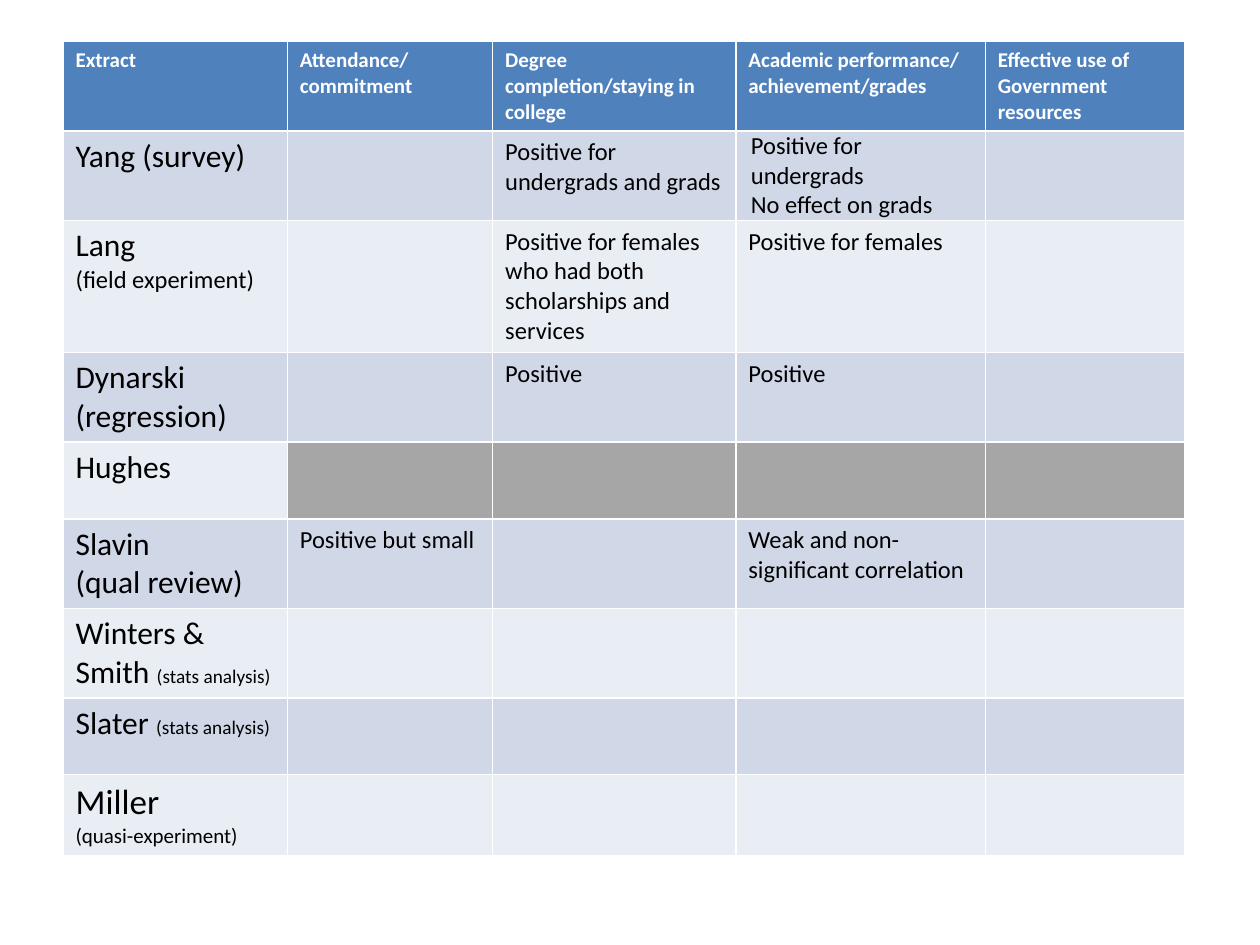
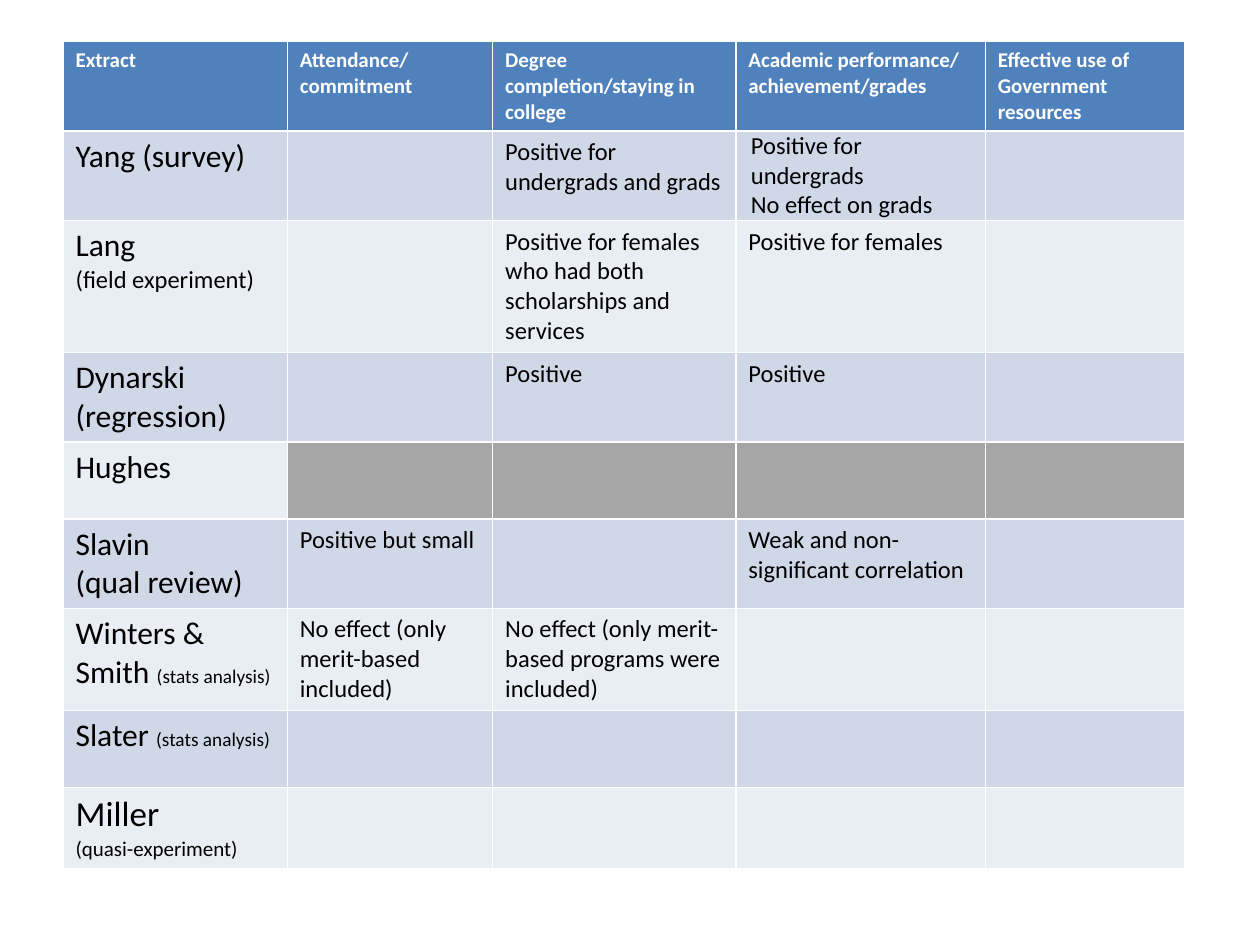
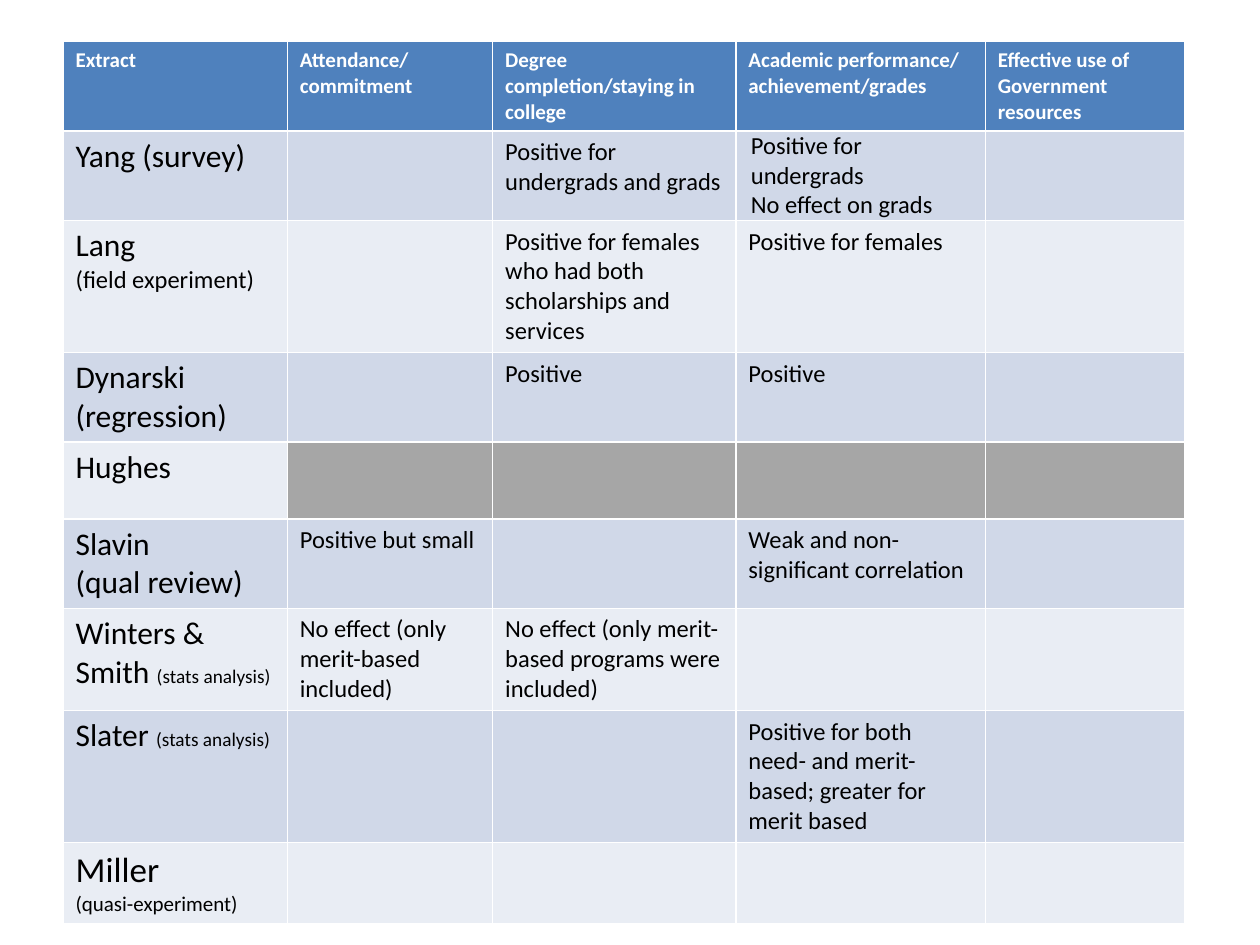
from pptx import Presentation, util as u
from pptx.dml.color import RGBColor

FONT = "Calibri"
HEADER_FILL, BANDS, EXCLUDED_FILL = "4F81BD", ("E9EDF4", "D0D8E8"), "A6A6A6"
WHITE, BLACK = "FFFFFF", "000000"
COLUMN_WIDTHS = (1.78, 1.63, 1.93, 1.98, 1.58)
ROW_HEIGHT = 0.61
FINDING_SIZE = 14

HEADERS = ("Extract", "Attendance/\ncommitment", "Degree completion/staying in college",
           "Academic performance/\nachievement/grades",
           "Effective use of Government resources")

# Each study is a list of paragraphs, each paragraph a list of (words, size)
STUDIES = (
    [[("Yang (survey)", 18)]],
    [[("Lang", 18)], [("(field experiment)", 14)]],
    [[("Dynarski", 18)], [("(regression)", 18)]],
    [[("Hughes", 18)]],
    [[("Slavin", 18)], [("(qual review)", 18)]],
    [[("Winters & Smith ", 18), ("(stats analysis)", 11)]],
    [[("Slater ", 18), ("(stats analysis)", 11)]],
    [[("Miller", 20)], [("(quasi-experiment)", 12)]],
)
YANG, HUGHES, ACADEMIC = 1, 4, 3

# Findings that each slide adds, by (row, column)
NEW_FINDINGS = (
    {(1, 2): "Positive for undergrads and grads",
     (1, 3): "Positive for undergrads\nNo effect on grads",
     (2, 2): "Positive for females who had both scholarships and services",
     (2, 3): "Positive for females",
     (3, 2): "Positive",
     (3, 3): "Positive",
     (5, 1): "Positive but small",
     (5, 3): "Weak and non-significant correlation"},
    {(6, 1): "No effect (only merit-based included)",
     (6, 2): "No effect (only merit-based programs were included)"},
    {(7, 3): "Positive for both need- and merit-based; greater for merit based"},
)


def color(hex_string):
    return RGBColor.from_string(hex_string)


def fill_cell(cell, fill, paragraphs, ink=BLACK, bold=False):
    cell.fill.solid()
    cell.fill.fore_color.rgb = color(fill)
    frame = cell.text_frame
    for index, spans in enumerate(paragraphs):
        para = frame.add_paragraph() if index else frame.paragraphs[0]
        for words, size in spans:
            span = para.add_run()
            span.text = words
            span.font.name = FONT
            span.font.size = u.Pt(size)
            span.font.bold = bold
            span.font.color.rgb = color(ink)


deck = Presentation()
deck.slide_width, deck.slide_height = u.Inches(10), u.Inches(7.5)
findings = {}

for additions in NEW_FINDINGS:
    findings.update(additions)
    page = deck.slides.add_slide(deck.slide_layouts[6])

    # Table grid
    row_count = len(STUDIES) + 1
    table = page.shapes.add_table(
        row_count, len(HEADERS), u.Inches(0.5), u.Inches(0.33),
        u.Inches(sum(COLUMN_WIDTHS)), u.Inches(ROW_HEIGHT * row_count)).table
    for column, width in zip(table.columns, COLUMN_WIDTHS):
        column.width = u.Inches(width)

    # Header row
    for column, header in enumerate(HEADERS):
        lines = [[(line, 12)] for line in header.split("\n")]
        fill_cell(table.cell(0, column), HEADER_FILL, lines, WHITE, True)

    # Studies and their findings
    for row, study in enumerate(STUDIES, 1):
        band = BANDS[row % 2]
        fill_cell(table.cell(row, 0), band, study)
        for column in range(1, len(HEADERS)):
            finding = findings.get((row, column))
            lines = [[(line, FINDING_SIZE)] for line in finding.split("\n")] if finding else []
            fill_cell(table.cell(row, column), EXCLUDED_FILL if row == HUGHES else band, lines)

    # Tighter margins for the three-line finding
    tight_cell = table.cell(YANG, ACADEMIC)
    tight_cell.margin_left = tight_cell.margin_right = u.Inches(0.12)
    tight_cell.margin_top = tight_cell.margin_bottom = 0

deck.save("out.pptx")
